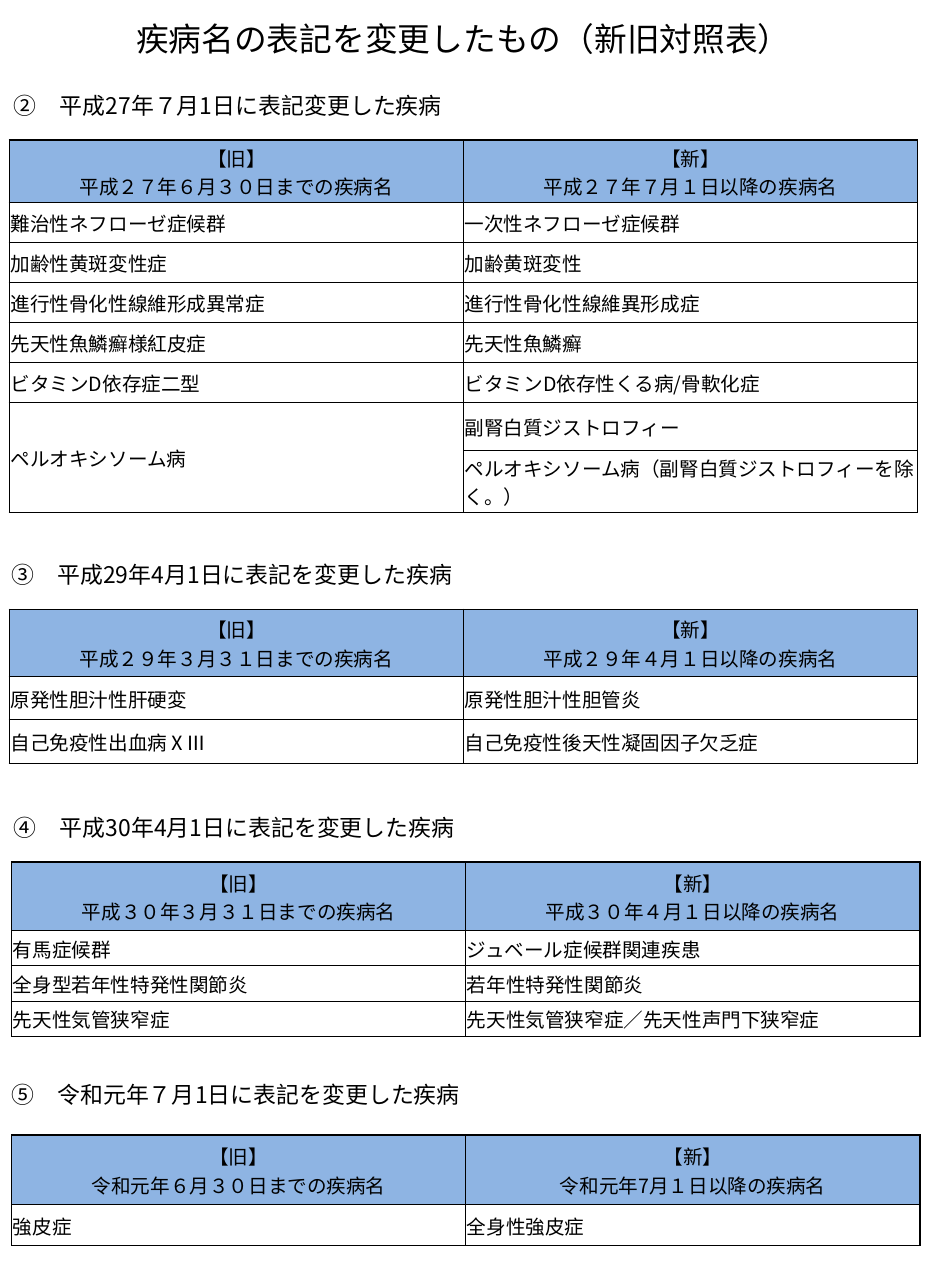
import pptx
import pptx.dml.color
import pptx.enum.text
import pptx.oxml
import pptx.oxml.ns
import pptx.util
from pptx.util import Inches

FONT = "Noto Sans CJK JP"
COLORS = {"text": "000000", "border": "000000", "header": "8EB4E3", "body": "FFFFFF"}
COLUMN_WIDTH = 3.86

# Each section: heading, its left and top, table left and top, row heights,
# last day of the old names, first day of the new names, pairs of names.
# A new name without an old one shares the old name above it.
SECTIONS = [
    ("②　平成27年７月1日に表記変更した疾病", (0.02, 0.73), (0.08, 1.19),
     [0.53] + [0.34] * 5 + [0.41, 0.53],
     "平成２７年６月３０日", "平成２７年７月１日",
     [("難治性ネフローゼ症候群", "一次性ネフローゼ症候群"),
      ("加齢性黄斑変性症", "加齢黄斑変性"),
      ("進行性骨化性線維形成異常症", "進行性骨化性線維異形成症"),
      ("先天性魚鱗癬様紅皮症", "先天性魚鱗癬"),
      ("ビタミンD依存症二型", "ビタミンD依存性くる病/骨軟化症"),
      ("ペルオキシソーム病", "副腎白質ジストロフィー"),
      (None, "ペルオキシソーム病（副腎白質ジストロフィーを除く。）")]),
    ("③　平成29年4月1日に表記を変更した疾病", (0, 4.72), (0.08, 5.18),
     [0.57] + [0.37] * 2,
     "平成２９年３月３１日", "平成２９年４月１日",
     [("原発性胆汁性肝硬変", "原発性胆汁性胆管炎"),
      ("自己免疫性出血病ⅩⅢ", "自己免疫性後天性凝固因子欠乏症")]),
    ("④　平成30年4月1日に表記を変更した疾病", (0.02, 6.87), (0.1, 7.33),
     [0.58] + [0.3] * 3,
     "平成３０年３月３１日", "平成３０年４月１日",
     [("有馬症候群", "ジュベール症候群関連疾患"),
      ("全身型若年性特発性関節炎", "若年性特発性関節炎"),
      ("先天性気管狭窄症", "先天性気管狭窄症／先天性声門下狭窄症")]),
    ("⑤　令和元年７月1日に表記を変更した疾病", (0, 9.14), (0.1, 9.65),
     [0.59, 0.35],
     "令和元年６月３０日", "令和元年7月１日",
     [("強皮症", "全身性強皮症")]),
]


def rgb(name):
    return pptx.dml.color.RGBColor.from_string(COLORS[name])


def write(frame, text, size, align=pptx.enum.text.PP_ALIGN.LEFT):
    """Put one formatted paragraph in a text frame, with the East Asian font too."""
    paragraph = frame.paragraphs[0]
    paragraph.text = text
    paragraph.alignment = align
    font = paragraph.font
    font.name = FONT
    font.size = pptx.util.Pt(size)
    font.bold = False
    font.color.rgb = rgb("text")
    defaults = paragraph._p.pPr.find(pptx.oxml.ns.qn("a:defRPr"))
    defaults.append(pptx.oxml.parse_xml(
        f'<a:ea {pptx.oxml.ns.nsdecls("a")} typeface="{FONT}"/>'))


def set_borders(cell, widths):
    """Draw cell borders; widths in points are left, right, top, bottom."""
    properties = cell._tc.get_or_add_tcPr()
    for side, width in zip("LRTB", widths):
        properties.append(pptx.oxml.parse_xml(
            f'<a:ln{side} {pptx.oxml.ns.nsdecls("a")} w="{pptx.util.Pt(width)}">'
            f'<a:solidFill><a:srgbClr val="{COLORS["border"]}"/></a:solidFill>'
            f'</a:ln{side}>'))


def add_title(slide, text):
    title = slide.shapes.title
    title.left, title.top = Inches(0.08), Inches(0.11)
    title.width, title.height = Inches(7.72), Inches(0.44)
    frame = title.text_frame
    frame.vertical_anchor = pptx.enum.text.MSO_ANCHOR.TOP
    frame.auto_size = pptx.enum.text.MSO_AUTO_SIZE.SHAPE_TO_FIT_TEXT
    write(frame, text, 20, pptx.enum.text.PP_ALIGN.CENTER)


def add_heading(slide, text, left, top):
    heading = slide.shapes.add_textbox(Inches(left), Inches(top), Inches(5), Inches(0.34))
    heading.text_frame.word_wrap = True
    heading.text_frame.auto_size = pptx.enum.text.MSO_AUTO_SIZE.SHAPE_TO_FIT_TEXT
    write(heading.text_frame, text, 14)


def format_cell(cell, row, column, last_row):
    """Thick lines go round the table and below its header, thin ones elsewhere."""
    set_borders(cell, (1 if column == 0 else 0.5,
                       1 if column == 1 else 0.5,
                       1 if row <= 1 else 0.5,
                       1 if row in (0, last_row) else 0.5))
    cell.fill.solid()
    cell.fill.fore_color.rgb = rgb("header" if row == 0 else "body")
    cell.margin_left = cell.margin_right = cell.margin_top = Inches(0.01)
    cell.margin_bottom = 0
    cell.vertical_anchor = pptx.enum.text.MSO_ANCHOR.MIDDLE


def add_name_table(slide, left, top, heights, old_until, new_from, names):
    table = slide.shapes.add_table(
        len(heights), 2, Inches(left), Inches(top),
        Inches(2 * COLUMN_WIDTH), Inches(sum(heights))).table
    table.first_row = table.horz_banding = False
    for column in table.columns:
        column.width = Inches(COLUMN_WIDTH)
    for row, height in zip(table.rows, heights):
        row.height = Inches(height)

    header = (f"【旧】\v{old_until}までの疾病名", f"【新】\v{new_from}以降の疾病名")
    for row, pair in enumerate([header, *names]):
        align = pptx.enum.text.PP_ALIGN.LEFT if row else pptx.enum.text.PP_ALIGN.CENTER
        for column, name in enumerate(pair):
            cell = table.cell(row, column)
            format_cell(cell, row, column, len(names))
            if name is None:
                table.cell(row - 1, column).merge(cell)
            else:
                write(cell.text_frame, name, 12, align)


def main():
    presentation = pptx.Presentation()
    presentation.slide_width = Inches(7.88)
    presentation.slide_height = Inches(10.95)
    slide = presentation.slides.add_slide(presentation.slide_layouts[5])
    add_title(slide, "疾病名の表記を変更したもの（新旧対照表）")
    for heading, heading_at, table_at, heights, old_until, new_from, names in SECTIONS:
        add_heading(slide, heading, *heading_at)
        add_name_table(slide, *table_at, heights, old_until, new_from, names)
    presentation.save("out.pptx")


if __name__ == "__main__":
    main()
